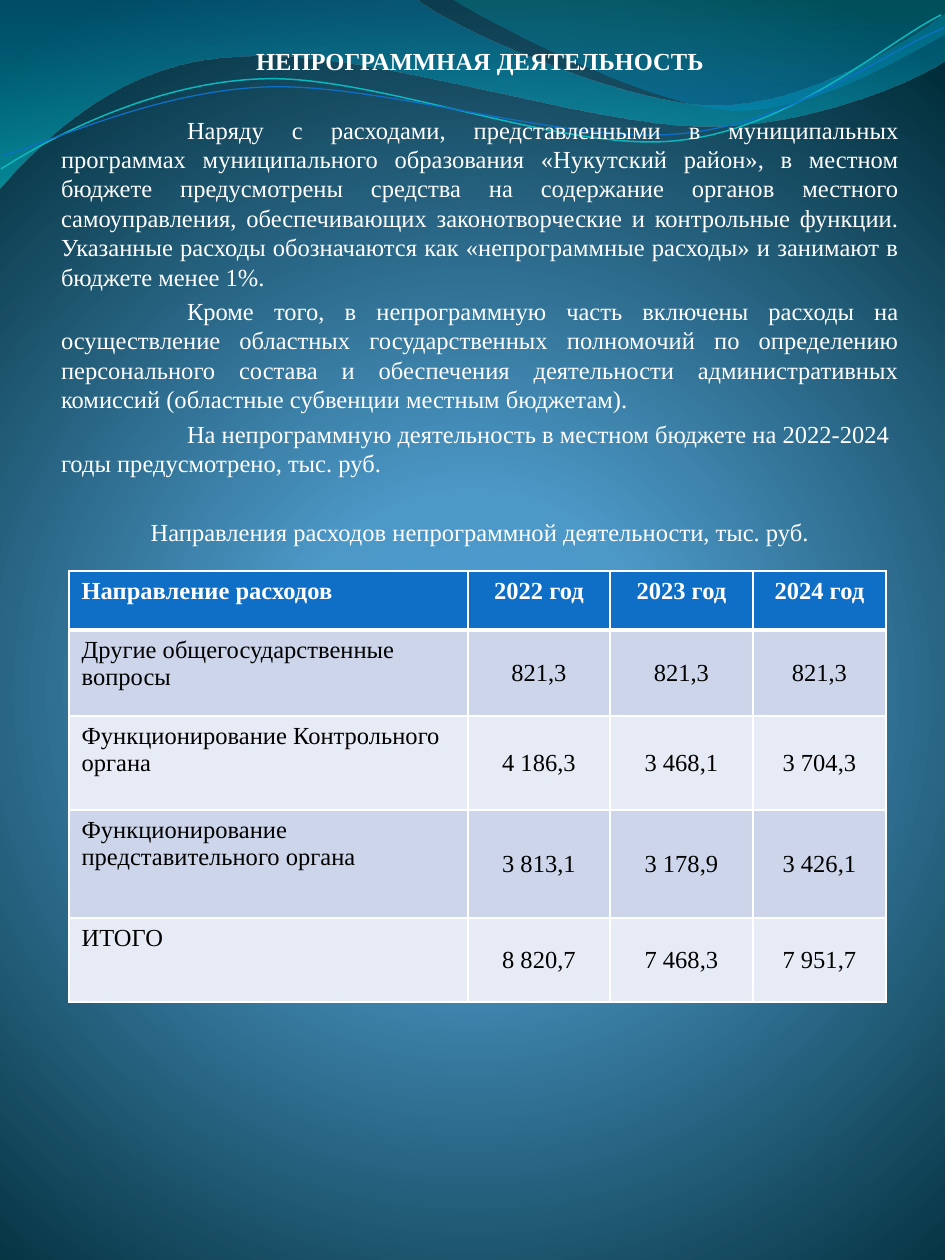
"""Build the budget slide on non-programme activity: waves, explanatory text and a spending table."""
from dataclasses import dataclass

from lxml import etree
from pptx import Presentation
from pptx import util as u
from pptx.dml.color import RGBColor
from pptx.enum import text
from pptx.oxml import ns, parse_xml

EMU_PER_PX = 914400 / 126


@dataclass(frozen=True)
class Theme:
    font: str = "Times New Roman"
    size: float = 14
    gap: float = 2.8
    section_gap: float = 22.4
    white: str = "FFFFFF"
    black: str = "000000"
    header: str = "0F6FC6"
    bands: tuple = ("CCD5EA", "E7EBF5")
    border: int = 1
    header_border: int = 3
    backdrop: tuple = ((0, "4AA0D6", 100), (25, "4C98C7", 100), (100, "002C38", 100))


THEME = Theme()
ALIGN = text.PP_ALIGN
SLIDE_SIZE = (945, 1260)
BODY_BOX = (55, 40, 850, 1171)
BODY_INSET = 6
FIRST_INDENT = 126

BACKDROP_SHAPE = '<a:path path="circle"><a:fillToRect l="10000" t="110000" r="10000" b="100000"/></a:path>'
RIBBON_SHAPE = '<a:lin ang="5400000" scaled="1"/>'

RIBBONS = [
    (((0, -1), (416, -1), (450, 28, 627, 106, 717, 106), (806, 106, 906, 43, 945, 15),
      (946, 60), (930, 73, 822, 127, 704, 127), (587, 126, 360, 47, 243, 57),
      (122, 59, 43, 140, -1, 190), (0, -1)),
     ((0, "0074A1", 45), (100, "00C6CF", 55))),
    (((452, -1), (481, 19, 644, 103, 727, 110), (809, 116, 908, 54, 945, 35), (945, 0), (452, -1)),
     ((0, "00A1A9", 30), (80, "008BBF", 45))),
]
WAVE_LINES = [
    (((1, 169), (45, 141, 149, 83, 261, 79), (373, 74, 561, 152, 674, 141),
      (789, 131, 886, 42, 941, 15)), "0AB8BF", 0.85),
    (((1, 156), (45, 145, 154, 91, 267, 87), (381, 83, 566, 144, 678, 134),
      (791, 125, 888, 50, 944, 28)), "0F6FC6", 0.75),
]

PARAGRAPHS = [
    ("НЕПРОГРАММНАЯ ДЕЯТЕЛЬНОСТЬ", ALIGN.CENTER, True, 0, 0),
    ("Наряду с расходами, представленными в муниципальных программах муниципального "
     "образования «Нукутский район», в местном бюджете предусмотрены средства на содержание "
     "органов местного самоуправления, обеспечивающих законотворческие и контрольные функции. "
     "Указанные расходы обозначаются как «непрограммные расходы» и занимают в бюджете менее 1%.",
     ALIGN.JUSTIFY, False, THEME.section_gap, FIRST_INDENT),
    ("Кроме того, в непрограммную часть включены расходы на осуществление областных "
     "государственных полномочий по определению персонального состава и обеспечения "
     "деятельности административных комиссий (областные субвенции местным бюджетам).",
     ALIGN.JUSTIFY, False, THEME.gap, FIRST_INDENT),
    ("На непрограммную деятельность в местном бюджете на 2022-2024 годы предусмотрено, тыс. руб.",
     ALIGN.LEFT, False, THEME.gap, FIRST_INDENT),
    ("Направления расходов непрограммной деятельности, тыс. руб.",
     ALIGN.CENTER, False, THEME.section_gap, 0),
]

SPENDING = [
    ("Направление расходов", "2022 год", "2023 год", "2024 год"),
    ("Другие общегосударственные вопросы", "821,3", "821,3", "821,3"),
    ("Функционирование Контрольного органа", "4 186,3", "3 468,1", "3 704,3"),
    ("Функционирование представительного органа", "3 813,1", "3 178,9", "3 426,1"),
    ("ИТОГО", "8 820,7", "7 468,3", "7 951,7"),
]
TABLE_ORIGIN = (69, 571)
COLUMN_WIDTHS = (399, 142, 143, 133)
ROW_HEIGHTS = (59, 86, 94, 108, 84)


def px(length):
    return u.Emu(round(length * EMU_PER_PX))


def rgb(colour):
    return RGBColor.from_string(colour)


def paint_gradient(holder, stops, geometry):
    marks = "".join(
        f'<a:gs pos="{place * 1000}"><a:srgbClr val="{colour}">'
        f'<a:alpha val="{opacity * 1000}"/></a:srgbClr></a:gs>'
        for place, colour, opacity in stops)
    gradient = parse_xml(f'<a:gradFill {ns.nsdecls("a")} rotWithShape="1">'
                         f'<a:gsLst>{marks}</a:gsLst>{geometry}</a:gradFill>')
    holder.replace(holder.find(ns.qn("a:noFill")), gradient)


def bend_legs(wave, legs):
    segments = iter(wave.element.findall(".//" + ns.qn("a:lnTo")))
    for leg in legs:
        parts = [next(segments) for _ in range(len(leg) // 2)]
        if len(parts) == 3:
            curve = etree.Element(ns.qn("a:cubicBezTo"))
            parts[0].addprevious(curve)
            for part in parts:
                curve.append(part[0])
                part.getparent().remove(part)


def add_wave(slide, route, closed):
    start, *legs = route
    points = [(px(x), px(y)) for leg in legs for x, y in zip(leg[::2], leg[1::2])]
    builder = slide.shapes.build_freeform(*map(px, start), scale=1.0)
    builder.add_line_segments(points, close=closed)
    wave = builder.convert_to_shape()
    bend_legs(wave, legs)
    wave.shadow.inherit = False
    wave.fill.background()
    return wave


def add_backdrop(slide):
    slide.background.fill.background()
    paint_gradient(slide.element.find(".//" + ns.qn("p:bgPr")), THEME.backdrop, BACKDROP_SHAPE)
    for route, stops in RIBBONS:
        ribbon = add_wave(slide, route, True)
        ribbon.line.fill.background()
        paint_gradient(ribbon.element.spPr, stops, RIBBON_SHAPE)
    for route, colour, width in WAVE_LINES:
        wave = add_wave(slide, route, False)
        wave.line.color.rgb = rgb(colour)
        wave.line.width = u.Pt(width)


def write(paragraph, wording, align, colour, bold):
    paragraph.alignment = align
    run = paragraph.add_run()
    run.text = wording
    run.font.name = THEME.font
    run.font.size = u.Pt(THEME.size)
    run.font.bold = bold
    run.font.color.rgb = rgb(colour)


def add_body(slide):
    body = slide.shapes.add_textbox(*map(px, BODY_BOX)).text_frame
    body.word_wrap = True
    body.margin_left = body.margin_right = body.margin_top = body.margin_bottom = px(BODY_INSET)
    for index, (wording, align, bold, before, indent) in enumerate(PARAGRAPHS):
        paragraph = body.add_paragraph() if index else body.paragraphs[0]
        write(paragraph, wording, align, THEME.white, bold)
        if before:
            paragraph.space_before = u.Pt(before)
        if indent:
            paragraph._p.get_or_add_pPr().set("indent", str(px(indent)))


def add_borders(cell, top, bottom):
    properties = cell._tc.get_or_add_tcPr()
    for side, width in zip("LRTB", (THEME.border, THEME.border, top, bottom)):
        edge = etree.SubElement(properties, ns.qn(f"a:ln{side}"), w=str(u.Pt(width)))
        fill = etree.SubElement(edge, ns.qn("a:solidFill"))
        etree.SubElement(fill, ns.qn("a:srgbClr"), val=THEME.white)


def add_spending(slide):
    table = slide.shapes.add_table(
        len(SPENDING), len(COLUMN_WIDTHS), *map(px, TABLE_ORIGIN),
        px(sum(COLUMN_WIDTHS)), px(sum(ROW_HEIGHTS))).table
    for column, width in zip(table.columns, COLUMN_WIDTHS):
        column.width = px(width)
    for r, (entries, height) in enumerate(zip(SPENDING, ROW_HEIGHTS)):
        table.rows[r].height = px(height)
        heading = r == 0
        for c, entry in enumerate(entries):
            cell = table.cell(r, c)
            add_borders(cell, THEME.header_border if r == 1 else THEME.border,
                        THEME.header_border if heading else THEME.border)
            cell.fill.solid()
            cell.fill.fore_color.rgb = rgb(THEME.header if heading else THEME.bands[(r - 1) % 2])
            if c and not heading:
                cell.vertical_anchor = text.MSO_ANCHOR.MIDDLE
            write(cell.text_frame.paragraphs[0], entry, ALIGN.CENTER if c else ALIGN.LEFT,
                  THEME.white if heading else THEME.black, heading)


def main():
    deck = Presentation()
    deck.slide_width, deck.slide_height = map(px, SLIDE_SIZE)
    slide = deck.slides.add_slide(deck.slide_layouts[6])
    add_backdrop(slide)
    add_body(slide)
    add_spending(slide)
    deck.save("out.pptx")


if __name__ == "__main__":
    main()
